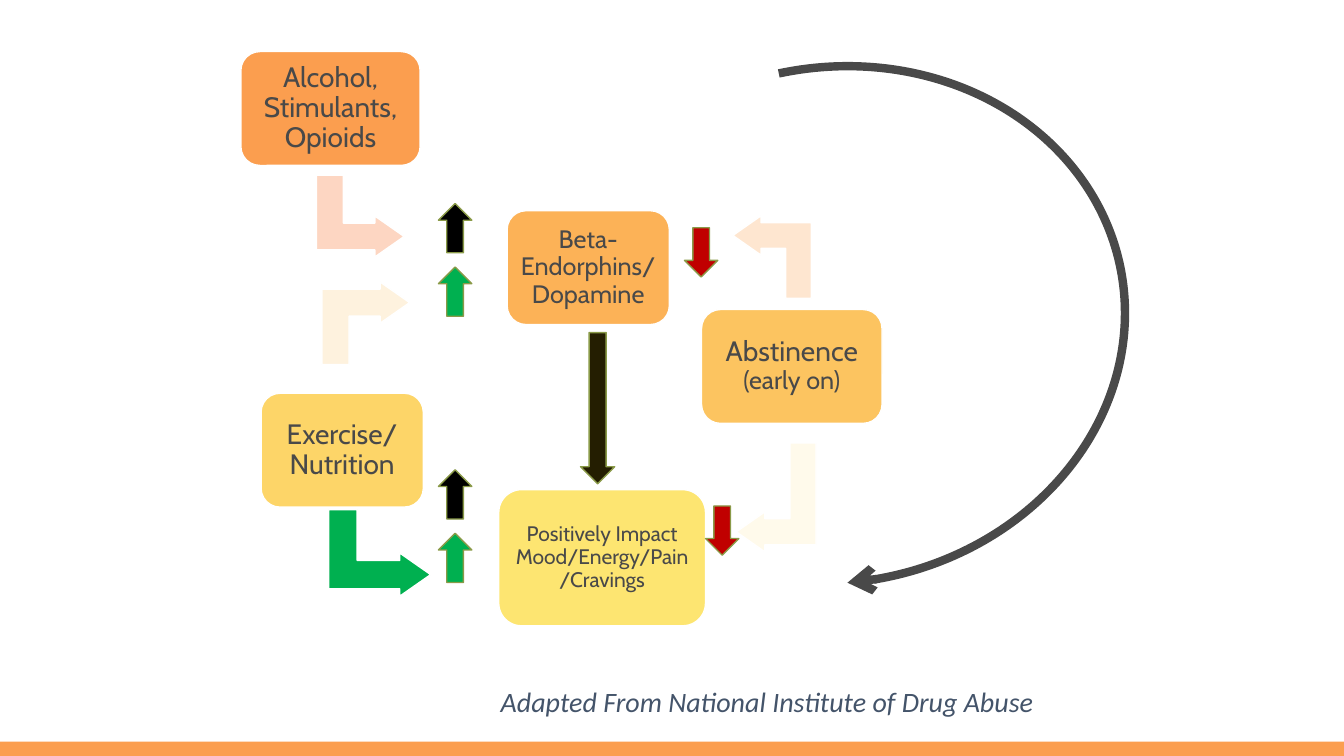
"""Build a slide on how substances, exercise and abstinence affect mood."""
from lxml import etree
from pptx import Presentation
from pptx.dml.color import RGBColor
from pptx.enum.shapes import MSO_SHAPE
from pptx.enum.text import MSO_ANCHOR, PP_ALIGN
from pptx.oxml.ns import qn
from pptx.util import Cm, Pt

RECT = MSO_SHAPE.RECTANGLE
ROUND = MSO_SHAPE.ROUNDED_RECTANGLE
BENT = MSO_SHAPE.BENT_UP_ARROW
UP = MSO_SHAPE.UP_ARROW
ARC = MSO_SHAPE.ARC
MIDDLE = MSO_ANCHOR.MIDDLE
CENTER, RIGHT = PP_ALIGN.CENTER, PP_ALIGN.RIGHT

WIDTH, HEIGHT = 33.87, 19.05
ARROW = (0.84, 1.24)
COLORS = {
    "white": "FFFFFF", "black": "000000", "gray": "494949", "slate": "44546A",
    "green": "00B050", "red": "C00000", "dark": "241E01", "olive": "8A9A48",
    "orange": "FB9E4F", "amber": "FCB257", "gold": "FCC460",
    "sand": "FDD568", "yellow": "FDE571",
    "pink": "FDD6C2", "peach": "FEE6D0", "cream": "FEF2DE", "ivory": "FFFAEB",
}


def color(name):
    """Return the named colour."""
    return RGBColor.from_string(COLORS[name])


def draw(slide, kind, box, fill=None, line=None, width=1, turn=0):
    """Add a preset shape in a box given in centimetres."""
    shape = slide.shapes.add_shape(kind, *map(Cm, box))
    shape.shadow.inherit = False
    shape.rotation = turn
    if fill:
        shape.fill.solid()
        shape.fill.fore_color.rgb = color(fill)
    else:
        shape.fill.background()
    if line:
        shape.line.color.rgb = color(line)
        shape.line.width = Pt(width)
    else:
        shape.line.fill.background()
    return shape


def style(run, font, size, tint):
    """Set the font, size and colour of a run."""
    run.font.name = font
    run.font.size = Pt(size)
    run.font.color.rgb = color(tint)


def card(slide, box, fill, text, size, note=""):
    """Add a rounded card with centred text and an optional smaller note."""
    shape = draw(slide, ROUND, box, fill, "white")
    frame = shape.text_frame
    frame.word_wrap = True
    frame.vertical_anchor = MIDDLE
    pad = Cm(size / 100)
    frame.margin_left = frame.margin_right = pad
    frame.margin_top = frame.margin_bottom = pad
    frame.text = text
    para = frame.paragraphs[0]
    para.alignment = CENTER
    para.line_spacing = 0.9
    style(para.runs[0], "Cabin", size, "gray")
    if note:
        run = para.add_run()
        run.text = note
        style(run, "Cabin", size - 2, "gray")


def bend(slide, box, fill, turn=90, flips=""):
    """Add a bent arrow, flipped along the axes named in flips."""
    shape = draw(slide, BENT, box, fill, "white", turn=turn)
    for i, value in enumerate((0.328, 0.25, 0.358)):
        shape.adjustments[i] = value
    for axis in flips:
        shape.element.spPr.xfrm.set("flip" + axis, "1")


def rise(slide, box):
    """Stack a black and a green up arrow at the two ends of a box."""
    left, top, wide, high = box
    tall = ARROW[1]
    draw(slide, UP, (left, top, wide, tall), "black", "olive")
    draw(slide, UP, (left, top + high - tall, wide, tall), "green", "olive")


def drop(slide, box, fill):
    """Add a down arrow."""
    draw(slide, UP, box, fill, "olive", turn=180)


def sweep(slide, box):
    """Add the long curved arrow."""
    shape = draw(slide, ARC, box, line="gray", width=6, turn=349.3)
    shape.adjustments[0] = 160.958
    shape.adjustments[1] = 58.662
    tail = etree.SubElement(shape.line._get_or_add_ln(), qn("a:tailEnd"))
    tail.set("type", "arrow")


def credit(slide, box):
    """Add the source line."""
    frame = slide.shapes.add_textbox(*map(Cm, box)).text_frame
    frame.word_wrap = True
    frame.text = "Adapted From National Institute of Drug Abuse "
    para = frame.paragraphs[0]
    para.alignment = RIGHT
    run = para.runs[0]
    style(run, "Calibri", 20, "slate")
    run.font.italic = True


def main():
    """Build and save the slide."""
    deck = Presentation()
    deck.slide_width, deck.slide_height = Cm(WIDTH), Cm(HEIGHT)
    slide = deck.slides.add_slide(deck.slide_layouts[6])

    draw(slide, RECT, (0, HEIGHT - 0.36, WIDTH, 0.36), "orange")

    bend(slide, (8.05, 4.34, 2.06, 2.21), "pink")
    bend(slide, (18.42, 5.49, 2.08, 1.98), "peach", flips="HV")
    bend(slide, (8.18, 7.04, 2.08, 2.21), "cream", flips="H")
    bend(slide, (18.19, 11.53, 2.74, 2.01), "ivory", flips="V")

    card(slide, (6.07, 1.3, 4.52, 2.87), "orange",
         "Alcohol, Stimulants, Opioids", 20)
    card(slide, (12.78, 5.31, 4.09, 2.87), "amber",
         "Beta-Endorphins/Dopamine", 18)
    card(slide, (17.68, 7.8, 4.55, 2.87), "gold",
         "Abstinence", 20, " (early on)")
    card(slide, (6.58, 9.91, 4.09, 2.87), "sand", "Exercise/ Nutrition", 20)
    card(slide, (12.57, 12.34, 5.21, 3.43), "yellow",
         "Positively Impact Mood/Energy/Pain/Cravings", 15)

    bend(slide, (8.48, 12.65, 2.18, 2.57), "green", 270, "HV")
    credit(slide, (12.19, 17.12, 14.27, 1.12))

    for top in (5.13, 11.84):
        rise(slide, (11.05, top, ARROW[0], 2.84))
    for left, top in ((17.25, 5.74), (17.78, 12.75)):
        drop(slide, (left, top, *ARROW), "red")
    drop(slide, (14.63, 8.38, 0.86, 3.81), "dark")
    sweep(slide, (13.67, 1.7, 14.71, 12.98))

    deck.save("out.pptx")


if __name__ == "__main__":
    main()
